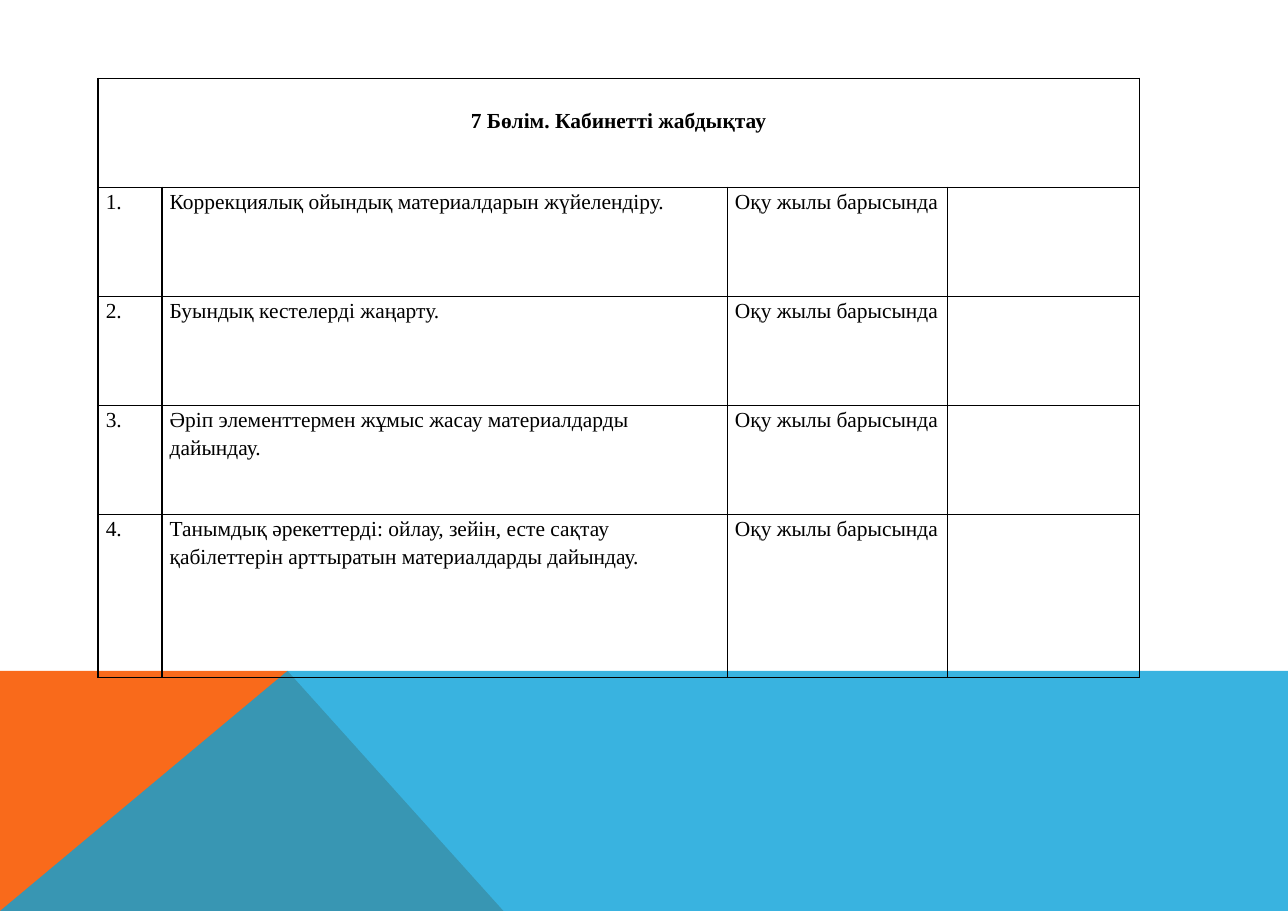
from dataclasses import dataclass

from lxml.etree import SubElement
from pptx import Presentation
from pptx.dml.color import RGBColor
from pptx.enum.text import PP_ALIGN
from pptx.oxml.ns import qn
from pptx.util import Inches, Pt


@dataclass(frozen=True)
class Theme:
    font: str = "Times New Roman"
    size: int = 14
    ink: str = "000000"
    orange: str = "F96A1B"
    blue: str = "08A1D9"
    border: int = 1
    line_spacing: float = 1.15


class SlideBuilder:
    def __init__(self, slide, theme):
        self.s = slide
        self.theme = theme

    def polygon(self, points, color, opacity=100):
        """Draw a closed outline through points in inches; opacity in percent."""
        start, *rest = [(Inches(x), Inches(y)) for x, y in points]
        builder = self.s.shapes.build_freeform(*start)
        builder.add_line_segments(rest, close=True)
        sp = builder.convert_to_shape()
        sp.shadow.inherit = False
        sp.line.fill.background()
        sp.fill.solid()
        sp.fill.fore_color.rgb = RGBColor.from_string(color)
        if opacity < 100:
            clr = sp._element.spPr.find(".//" + qn("a:srgbClr"))
            SubElement(clr, qn("a:alpha"), val=str(opacity * 1000))

    def table(self, left, top, widths, heights):
        frame = self.s.shapes.add_table(
            len(heights), len(widths), Inches(left), Inches(top),
            Inches(sum(widths)), Inches(sum(heights)))
        tbl = frame.table
        tbl.first_row = tbl.horz_banding = False
        for column, width in zip(tbl.columns, widths):
            column.width = Inches(width)
        for row, height in zip(tbl.rows, heights):
            row.height = Inches(height)
        for cell in tbl.iter_cells():
            self.cell_frame(cell)
        return tbl

    def cell_frame(self, cell):
        """Set the margins, black borders and empty fill of a cell."""
        cell.margin_left = cell.margin_right = Inches(0.07)
        cell.margin_top = cell.margin_bottom = 0
        tcPr = cell._tc.get_or_add_tcPr()
        for side in ("a:lnL", "a:lnR", "a:lnT", "a:lnB"):
            ln = SubElement(tcPr, qn(side), w=str(Pt(self.theme.border)))
            fill = SubElement(ln, qn("a:solidFill"))
            SubElement(fill, qn("a:srgbClr"), val=self.theme.ink)
        cell.fill.background()

    def cell_text(self, cell, text, bold=False, align=PP_ALIGN.LEFT):
        p = cell.text_frame.paragraphs[0]
        p.text = text
        p.alignment = align
        p.line_spacing = self.theme.line_spacing
        for r in p.runs:
            r.font.name = self.theme.font
            r.font.size = Pt(self.theme.size)
            r.font.bold = bold
            r.font.color.rgb = RGBColor.from_string(self.theme.ink)


WIDTH, HEIGHT = 11.69, 8.27
BAND_TOP, PEAK_X = 6.09, 2.61
HEADING = "7 Бөлім. Кабинетті жабдықтау"
PERIOD = "Оқу жылы барысында"
TASKS = [
    "Коррекциялық ойындық материалдарын жүйелендіру.",
    "Буындық кестелерді жаңарту.",
    "Әріп элементтермен жұмыс жасау материалдарды дайындау.",
    "Танымдық әрекеттерді: ойлау, зейін, есте сақтау қабілеттерін "
    "арттыратын материалдарды дайындау.",
]


def main():
    prs = Presentation()
    prs.slide_width, prs.slide_height = Inches(WIDTH), Inches(HEIGHT)
    theme = Theme()
    page = SlideBuilder(prs.slides.add_slide(prs.slide_layouts[6]), theme)

    page.polygon([(0, HEIGHT), (0, BAND_TOP), (PEAK_X, BAND_TOP),
                  (4.57, HEIGHT)], theme.orange)
    page.polygon([(0, HEIGHT), (PEAK_X, BAND_TOP), (WIDTH, BAND_TOP),
                  (WIDTH, HEIGHT)], theme.blue, opacity=80)

    tbl = page.table(0.89, 0.71, [0.58, 5.13, 2, 1.74], [0.99] * 4 + [1.48])
    heading = tbl.cell(0, 0)
    heading.merge(tbl.cell(0, 3))
    heading.margin_top = Inches(0.25)
    page.cell_text(heading, HEADING, bold=True, align=PP_ALIGN.CENTER)
    for row, task in enumerate(TASKS, start=1):
        for col, text in enumerate((f"{row}.", task, PERIOD)):
            page.cell_text(tbl.cell(row, col), text)

    prs.save("out.pptx")


if __name__ == "__main__":
    main()
